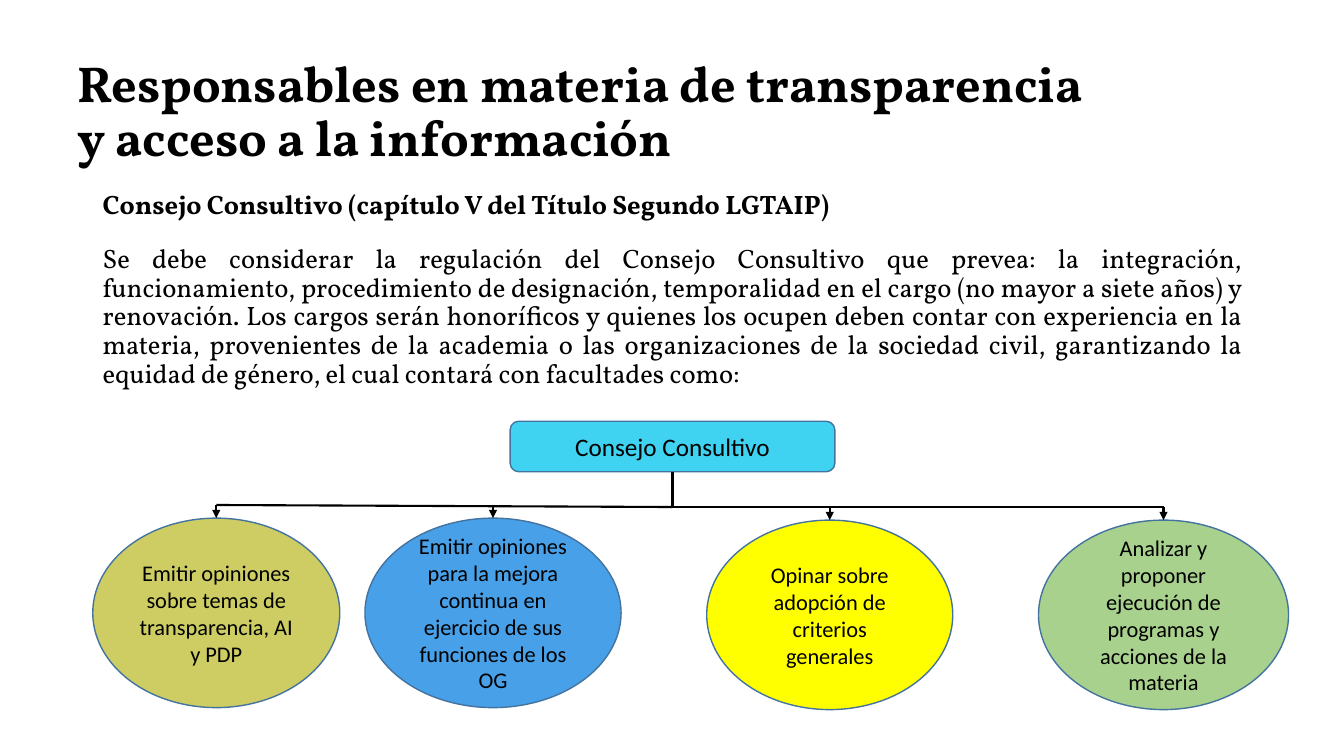
import pptx
import pptx.dml.color
import pptx.enum.shapes
import pptx.enum.text
import pptx.oxml.ns
import pptx.util
from lxml import etree
from pptx.util import Inches

RGBColor = pptx.dml.color.RGBColor
Shape = pptx.enum.shapes.MSO_SHAPE
Align = pptx.enum.text.PP_ALIGN
Anchor = pptx.enum.text.MSO_ANCHOR

BLACK = RGBColor(0x00, 0x00, 0x00)
OUTLINE = RGBColor(0x43, 0x73, 0x9E)
CYAN = RGBColor(0x3F, 0xD3, 0xF1)
OLIVE = RGBColor(0xCD, 0xCD, 0x63)
BLUE = RGBColor(0x48, 0xA0, 0xE8)
YELLOW = RGBColor(0xFF, 0xFF, 0x00)
GREEN = RGBColor(0xA9, 0xD1, 0x8E)

TITLE_LINES = ("Responsables en materia de transparencia", "y acceso a la información")
HEADING = "Consejo Consultivo (capítulo V del Título Segundo LGTAIP)"
BODY = (
    "Se debe considerar la regulación del Consejo Consultivo que prevea: la integración, "
    "funcionamiento, procedimiento de designación, temporalidad en el cargo (no mayor a "
    "siete años) y renovación. Los cargos serán honoríficos y quienes los ocupen deben "
    "contar con experiencia en la materia, provenientes de la academia o las organizaciones "
    "de la sociedad civil, garantizando la equidad de género, el cual contará con "
    "facultades como:"
)
# left, top, width, arrow start height, fill, text
POWERS = (
    (0.92, 5.14, 2.45, 5.01, OLIVE, "Emitir opiniones sobre temas de transparencia, AI y PDP"),
    (3.62, 5.14, 2.54, 5.02, BLUE,
     "Emitir opiniones para la mejora continua en ejercicio de sus funciones de los OG"),
    (7.01, 5.16, 2.44, 5.03, YELLOW, "Opinar sobre adopción de criterios generales"),
    (10.3, 5.16, 2.48, 5.03, GREEN,
     "Analizar y proponer ejecución de programas y acciones de la materia"),
)
POWER_HEIGHT = 1.88
TRUNK_X, RAIL_Y = 6.67, 5.03


def add_run(paragraph, text, font_name, size, bold=False):
    run = paragraph.add_run()
    run.text = text
    run.font.name = font_name
    run.font.size = pptx.util.Pt(size)
    run.font.bold = bold
    run.font.color.rgb = BLACK


def add_text_frame(slide, left, top, width, height):
    box = slide.shapes.add_textbox(Inches(left), Inches(top), Inches(width), Inches(height))
    box.text_frame.word_wrap = True
    return box.text_frame


def add_title(slide):
    frame = add_text_frame(slide, 0.67, 0.4, 11.5, 1.45)
    frame.vertical_anchor = Anchor.MIDDLE
    paragraph = frame.paragraphs[0]
    paragraph.line_spacing = 0.9
    first_line, second_line = TITLE_LINES
    add_run(paragraph, first_line, "Vollkorn", 36, bold=True)
    paragraph.add_line_break()
    add_run(paragraph, second_line, "Vollkorn", 36, bold=True)


def add_body(slide):
    frame = add_text_frame(slide, 0.92, 1.85, 11.5, 2.2)
    heading, body = frame.paragraphs[0], frame.add_paragraph()
    for paragraph in (heading, body):
        paragraph.alignment = Align.JUSTIFY
        paragraph.line_spacing = 0.9
        paragraph.space_after = pptx.util.Pt(8)
    body.space_before = pptx.util.Pt(10)
    add_run(heading, HEADING, "Vollkorn", 19, bold=True)
    add_run(body, BODY, "Vollkorn", 19)


def add_node(slide, kind, left, top, width, height, fill, text, size):
    node = slide.shapes.add_shape(
        kind, Inches(left), Inches(top), Inches(width), Inches(height))
    node.shadow.inherit = False
    node.fill.solid()
    node.fill.fore_color.rgb = fill
    node.line.color.rgb = OUTLINE
    node.line.width = pptx.util.Pt(1)
    frame = node.text_frame
    frame.word_wrap = True
    frame.vertical_anchor = Anchor.MIDDLE
    paragraph = frame.paragraphs[0]
    paragraph.alignment = Align.CENTER
    add_run(paragraph, text, "Calibri", size)
    return node


def add_line(slide, begin_x, begin_y, end_x, end_y, arrow=False):
    line = slide.shapes.add_connector(
        pptx.enum.shapes.MSO_CONNECTOR.STRAIGHT,
        Inches(begin_x), Inches(begin_y), Inches(end_x), Inches(end_y))
    line.line.color.rgb = BLACK
    line.line.width = pptx.util.Pt(1.5)
    if arrow:
        outline = line.line._get_or_add_ln()
        etree.SubElement(outline, pptx.oxml.ns.qn("a:tailEnd"), type="triangle")
    properties = line._element.spPr
    etree.SubElement(properties, pptx.oxml.ns.qn("a:effectLst"))
    return line


def add_diagram(slide):
    council = add_node(slide, Shape.ROUNDED_RECTANGLE, 5.06, 4.18, 3.22, 0.5,
                       CYAN, "Consejo Consultivo", 18)
    trunk = add_line(slide, TRUNK_X, 4.68, TRUNK_X, RAIL_Y)
    trunk.begin_connect(council, 2)

    for left, top, width, start_y, fill, text in POWERS:
        power = add_node(slide, Shape.OVAL, left, top, width, POWER_HEIGHT, fill, text, 16)
        center_x = left + width / 2
        arrow = add_line(slide, center_x, start_y, center_x, top, arrow=True)
        arrow.end_connect(power, 0)

    for left, _, width, start_y, _, _ in (POWERS[0], POWERS[-1]):
        add_line(slide, TRUNK_X, RAIL_Y, left + width / 2, start_y)


def main():
    presentation = pptx.Presentation()
    presentation.slide_width = Inches(13.33)
    presentation.slide_height = Inches(7.5)
    slide = presentation.slides.add_slide(presentation.slide_layouts[6])
    add_title(slide)
    add_body(slide)
    add_diagram(slide)
    presentation.save("out.pptx")


if __name__ == "__main__":
    main()
